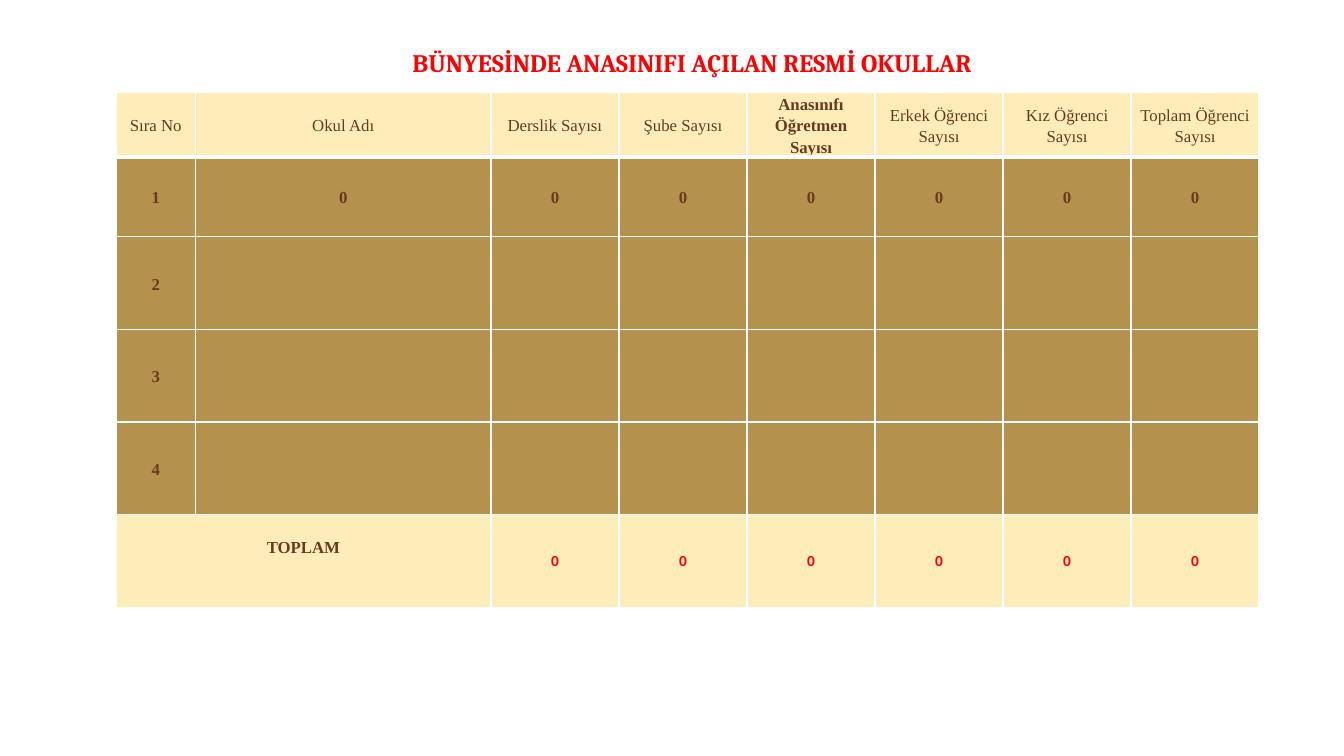
from dataclasses import dataclass

from lxml import etree
from pptx import Presentation
from pptx.dml.color import RGBColor
from pptx.enum.text import MSO_ANCHOR, MSO_AUTO_SIZE, PP_ALIGN
from pptx.oxml.ns import qn
from pptx.util import Inches, Pt

CENTER = PP_ALIGN.CENTER
TOP = MSO_ANCHOR.TOP
MIDDLE = MSO_ANCHOR.MIDDLE
NO_AUTOFIT = MSO_AUTO_SIZE.NONE
TITLE_ONLY = 5


@dataclass(frozen=True)
class Theme:
    red: str = "FF0000"
    brown: str = "6A3A20"
    cream: str = "FFEDB9"
    ochre: str = "B4914C"
    white: str = "FFFFFF"
    title_font: str = "Cambria"
    table_font: str = "Times New Roman"
    total_font: str = "Calibri"
    title_size: int = 18
    table_size: int = 12
    total_size: int = 11


class SchoolPage:
    def __init__(self, deck, theme):
        self.theme = theme
        self.page = deck.slides.add_slide(deck.slide_layouts[TITLE_ONLY])

    def set_text(self, frame, text, font, size, color, bold, spacing):
        frame.text = text
        for para in frame.paragraphs:
            para.alignment = CENTER
            para.line_spacing = spacing
            for span in para.runs:
                span.font.name = font
                span.font.size = Pt(size)
                span.font.bold = bold
                span.font.color.rgb = RGBColor.from_string(color)

    def title(self, text, left, top, width, height):
        theme = self.theme
        box = self.page.shapes.title
        box.left, box.top = Inches(left), Inches(top)
        box.width, box.height = Inches(width), Inches(height)
        frame = box.text_frame
        frame.auto_size = NO_AUTOFIT
        frame.word_wrap = True
        frame.vertical_anchor = MIDDLE
        self.set_text(frame, text, theme.title_font, theme.title_size, theme.red, True, 0.9)

    def table(self, left, top, widths, heights):
        frame = self.page.shapes.add_table(
            len(heights), len(widths), Inches(left), Inches(top),
            Inches(sum(widths)), Inches(sum(heights)))
        grid = frame.table
        for column, width in zip(grid.columns, widths):
            column.width = Inches(width)
        for row, height in zip(grid.rows, heights):
            row.height = Inches(height)
        return grid

    def borders(self, cell, bottom):
        properties = cell._tc.get_or_add_tcPr()
        sides = {"a:lnL": 1, "a:lnR": 1, "a:lnT": 1, "a:lnB": bottom}
        for position, (side, points) in enumerate(sides.items()):
            line = etree.Element(qn(side), w=str(Pt(points)))
            fill = etree.SubElement(line, qn("a:solidFill"))
            etree.SubElement(fill, qn("a:srgbClr"), val=self.theme.white)
            properties.insert(position, line)

    def cell(self, cell, text, fill, bold=True, bottom=1):
        theme = self.theme
        cell.fill.solid()
        cell.fill.fore_color.rgb = RGBColor.from_string(fill)
        self.borders(cell, bottom)
        cell.vertical_anchor = MIDDLE
        cell.margin_left = cell.margin_right = Inches(0.07)
        cell.margin_top = cell.margin_bottom = Inches(0)
        if text:
            self.set_text(cell.text_frame, text, theme.table_font, theme.table_size,
                          theme.brown, bold, 1.15)

    def total_cell(self, cell, text):
        theme = self.theme
        self.cell(cell, "", theme.cream)
        cell.margin_left = cell.margin_right = cell.margin_top = Inches(0.01)
        self.set_text(cell.text_frame, text, theme.total_font, theme.total_size,
                      theme.red, True, 1.0)


def main():
    deck = Presentation()
    deck.slide_width, deck.slide_height = Inches(13.33), Inches(7.5)
    theme = Theme()
    page = SchoolPage(deck, theme)
    page.title("BÜNYESİNDE ANASINIFI AÇILAN RESMİ OKULLAR", 2.28, 0.44, 9.17, 0.39)

    headers = ["Sıra No", "Okul Adı", "Derslik Sayısı", "Şube Sayısı",
               "Anasınıfı Öğretmen Sayısı", "Erkek Öğrenci\nSayısı",
               "Kız Öğrenci\nSayısı", "Toplam Öğrenci\nSayısı"]
    school_rows = [["1"] + ["0"] * 7] + [[number] + [""] * 7 for number in "234"]
    grid = page.table(1.15, 0.92, [0.79, 2.93] + [1.27] * 6, [0.63, 0.79] + [0.92] * 4)

    for column, header in enumerate(headers):
        page.cell(grid.cell(0, column), header, theme.cream,
                  bold=header.startswith("Anasınıfı"), bottom=3)
    for row, values in enumerate(school_rows, start=1):
        for column, value in enumerate(values):
            page.cell(grid.cell(row, column), value, theme.ochre)

    total_row = len(school_rows) + 1
    label = grid.cell(total_row, 0)
    label.merge(grid.cell(total_row, 1))
    page.cell(label, "TOPLAM", theme.cream)
    label.vertical_anchor = TOP
    label.margin_top = Inches(0.21)
    for column in range(2, len(headers)):
        page.total_cell(grid.cell(total_row, column), "0")

    deck.save("out.pptx")


if __name__ == "__main__":
    main()
